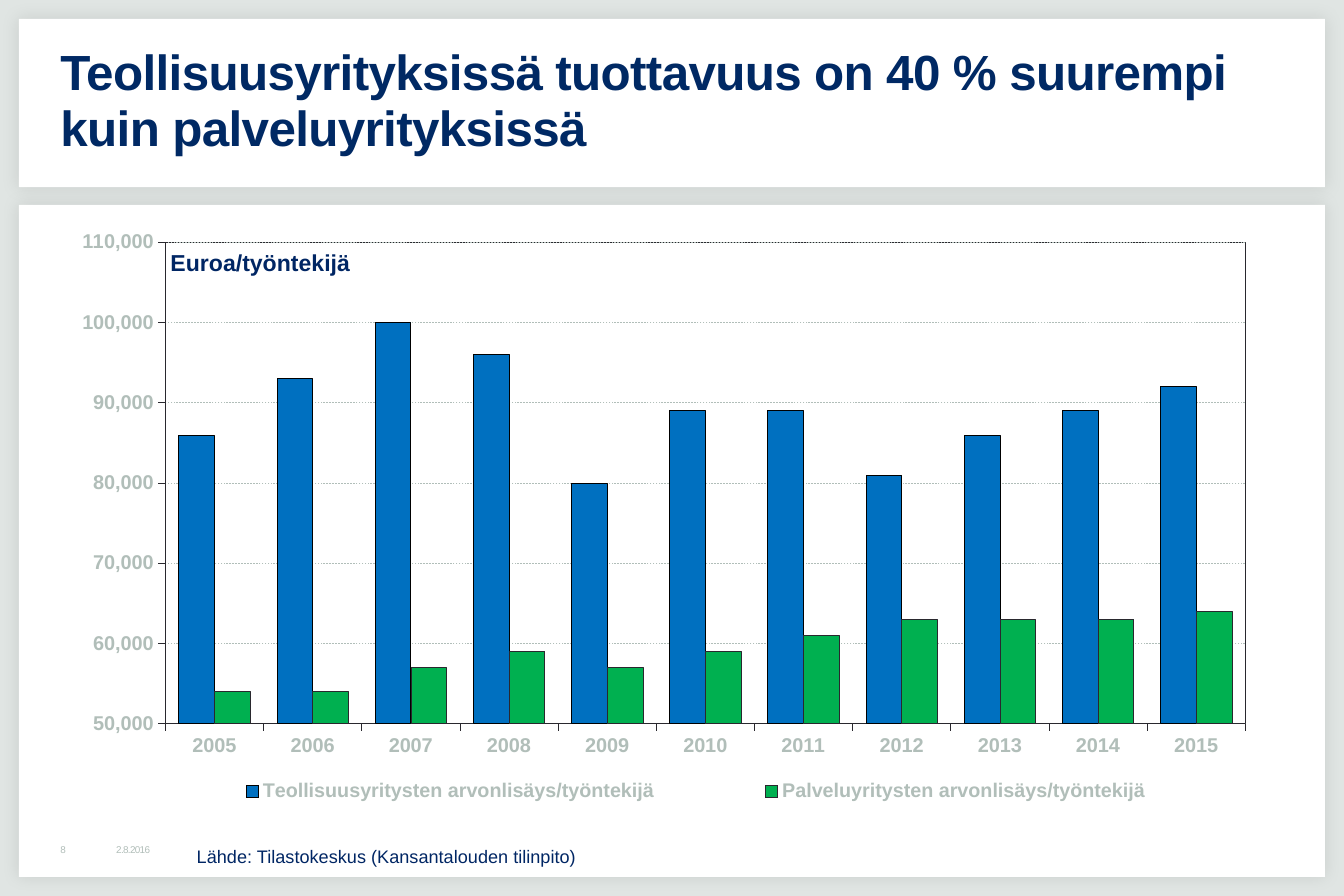
from dataclasses import dataclass

from lxml import etree
from pptx import Presentation
from pptx import util as u
from pptx.chart.data import CategoryChartData
from pptx.dml.color import RGBColor
from pptx.enum import chart as ch, dml, shapes, text
from pptx.oxml import parse_xml
from pptx.oxml.ns import nsdecls, qn


@dataclass(frozen=True)
class Theme:
    font: str = "Arial"
    background: str = "E0E5E3"
    panel: str = "FFFFFF"
    title: str = "002964"
    note: str = "002664"
    muted: str = "B1BEB9"
    line: str = "29282E"
    industry: str = "0070C0"
    industry_line: str = "000000"
    services: str = "00B050"
    title_size: float = 30
    unit_size: float = 14
    axis_size: float = 12.1
    legend_size: float = 12
    source_size: float = 11
    footer_size: float = 6
    hairline: float = 0.25


def inches(*lengths):
    return [u.Inches(length) for length in lengths]


def rgb(colour):
    return RGBColor.from_string(colour)


def manual_layout(x, y, w, h, inner=False):
    """Chart layout element, in fractions of the chart area."""
    target = '<c:layoutTarget val="inner"/>' if inner else ""
    return parse_xml(
        f'<c:layout {nsdecls("c")}><c:manualLayout>{target}'
        '<c:xMode val="edge"/><c:yMode val="edge"/>'
        f'<c:x val="{x}"/><c:y val="{y}"/><c:w val="{w}"/><c:h val="{h}"/>'
        "</c:manualLayout></c:layout>")


class SlideBuilder:
    def __init__(self, slide, theme):
        self.slide, self.theme = slide, theme
        slide.background.fill.solid()
        slide.background.fill.fore_color.rgb = rgb(theme.background)

    def panel(self, *box):
        """White card with a soft shadow on every side."""
        card = self.slide.shapes.add_shape(shapes.MSO_SHAPE.RECTANGLE, *inches(*box))
        card.fill.solid()
        card.fill.fore_color.rgb = rgb(self.theme.panel)
        card.line.fill.background()
        card.shadow.inherit = False
        effects = card.element.spPr.find(qn("a:effectLst"))
        effects.append(parse_xml(
            f'<a:outerShdw {nsdecls("a")} blurRad="{u.Pt(10)}" dist="0" algn="ctr" rotWithShape="0">'
            '<a:srgbClr val="000000"><a:alpha val="10000"/></a:srgbClr></a:outerShdw>'))

    def text(self, box, words, size, colour, bold=False, insets=(0.04,) * 4,
             anchor=text.MSO_ANCHOR.TOP, wrap=True, spacing=None, tracking=0):
        frame = self.slide.shapes.add_textbox(*inches(*box)).text_frame
        frame.word_wrap = wrap
        frame.vertical_anchor = anchor
        (frame.margin_left, frame.margin_top,
         frame.margin_right, frame.margin_bottom) = inches(*insets)
        paragraph = frame.paragraphs[0]
        if spacing:
            paragraph.line_spacing = spacing
        run = paragraph.add_run()
        run.text = words
        self.style_font(run.font, size, colour, bold)
        if tracking:
            run.font._element.set("spc", str(round(tracking * 100)))

    def style_font(self, font, size, colour, bold=True):
        font.name, font.size, font.bold = self.theme.font, u.Pt(size), bold
        font.color.rgb = rgb(colour)

    def style_line(self, line, colour):
        line.color.rgb = rgb(colour)
        line.width = u.Pt(self.theme.hairline)

    def column_chart(self, box, years, productivity):
        """productivity holds (name, values, fill colour, line colour) per sector."""
        theme = self.theme
        data = CategoryChartData(number_format="#,##0")
        data.categories = years
        for name, values, _, _ in productivity:
            data.add_series(name, values)
        chart = self.slide.shapes.add_chart(
            ch.XL_CHART_TYPE.COLUMN_CLUSTERED, *inches(*box), data).chart
        chart.has_title = False
        self.style_font(chart.font, theme.axis_size, theme.line)

        columns = chart.plots[0]
        columns.gap_width, columns.overlap = 75, 0
        columns.vary_by_categories = False
        for series, (_, _, fill, line) in zip(columns.series, productivity):
            series.format.fill.solid()
            series.format.fill.fore_color.rgb = rgb(fill)
            self.style_line(series.format.line, line)

        for axis in (chart.category_axis, chart.value_axis):
            axis.major_tick_mark = ch.XL_TICK_MARK.OUTSIDE
            axis.minor_tick_mark = ch.XL_TICK_MARK.NONE
            self.style_font(axis.tick_labels.font, theme.axis_size, theme.muted)
            self.style_line(axis.format.line, theme.line)
        euros = chart.value_axis
        euros.minimum_scale, euros.maximum_scale, euros.major_unit = 50000, 110000, 10000
        euros.tick_labels.number_format = "#,##0"
        euros.tick_labels.number_format_is_linked = False
        euros.has_major_gridlines = True
        self.style_line(euros.major_gridlines.format.line, theme.muted)
        euros.major_gridlines.format.line.dash_style = dml.MSO_LINE.DASH

        chart.has_legend = True
        legend = chart.legend
        legend.position = ch.XL_LEGEND_POSITION.BOTTOM
        legend.include_in_layout = False
        self.style_font(legend.font, theme.legend_size, theme.muted)
        self.place_chart_parts(chart, legend)

    def place_chart_parts(self, chart, legend):
        """Fix the plot and legend positions and frame the plot."""
        plot_area = chart.element.find(".//" + qn("c:plotArea"))
        legend_box = legend._element
        for part in (plot_area, legend_box):
            for layout in part.findall(qn("c:layout")):
                part.remove(layout)
        plot_area.insert(0, manual_layout(0.089, 0.031, 0.877, 0.819, inner=True))
        legend_box.find(qn("c:legendPos")).addnext(manual_layout(0.07, 0.93, 0.9, 0.07))
        frame = etree.SubElement(plot_area, qn("c:spPr"))
        frame.append(parse_xml(f'<a:noFill {nsdecls("a")}/>'))
        frame.append(parse_xml(
            f'<a:ln {nsdecls("a")} w="{u.Pt(self.theme.hairline)}"><a:solidFill>'
            f'<a:srgbClr val="{self.theme.line}"/></a:solidFill></a:ln>'))


def main():
    deck = Presentation()
    deck.slide_width, deck.slide_height = inches(11.34, 7.56)
    theme = Theme()
    page = SlideBuilder(deck.slides.add_slide(deck.slide_layouts[6]), theme)

    for top, height in ((0.16, 1.42), (1.73, 5.67)):
        page.panel(0.16, top, 11.02, height)
    for left, width, words in ((0.94, 1.42, "2.8.2016"), (0.47, 0.47, "8")):
        page.text((left, 7.09, width, 0.16), words, theme.footer_size, theme.muted,
                  anchor=text.MSO_ANCHOR.MIDDLE, tracking=-0.4)
    page.text((0.47, 0.31, 10.4, 1.1),
              "Teollisuusyrityksissä tuottavuus on 40 % suurempi kuin palveluyrityksissä",
              theme.title_size, theme.title, bold=True, insets=(0.04, 0.05, 0.1, 0.05),
              anchor=text.MSO_ANCHOR.MIDDLE, spacing=0.95, tracking=-0.4)

    industry = [86000, 93000, 100000, 96000, 80000, 89000, 89000, 81000, 86000, 89000, 92000]
    services = [54000, 54000, 57000, 59000, 57000, 59000, 61000, 63000, 63000, 63000, 64000]
    page.column_chart(
        (0.47, 1.89, 10.39, 4.96), [str(year) for year in range(2005, 2016)],
        [("Teollisuusyritysten arvonlisäys/työntekijä", industry,
          theme.industry, theme.industry_line),
         ("Palveluyritysten arvonlisäys/työntekijä", services,
          theme.services, theme.line)])

    page.text((1.58, 7.09, 5.99, 0.27), "Lähde: Tilastokeskus (Kansantalouden tilinpito)",
              theme.source_size, theme.note, insets=(0.08, 0.04, 0.08, 0.04))
    page.text((1.34, 2.05, 1.72, 0.34), "Euroa/työntekijä", theme.unit_size, theme.note,
              bold=True, insets=(0.1, 0.05, 0.1, 0.05), wrap=False)
    deck.save("out.pptx")


if __name__ == "__main__":
    main()
